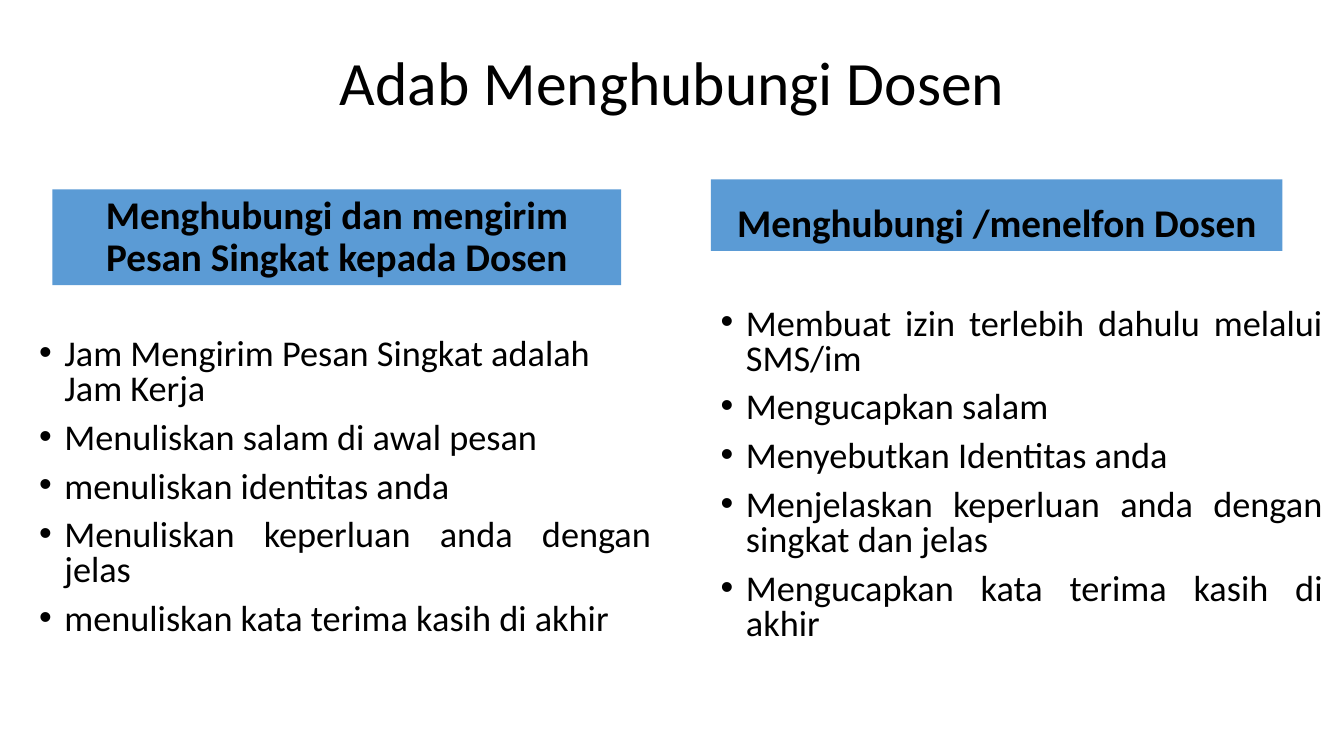
from lxml import etree
from pptx import Presentation
from pptx.dml.color import RGBColor
from pptx.enum.shapes import MSO_SHAPE
from pptx.enum.text import MSO_ANCHOR, MSO_AUTO_SIZE, PP_ALIGN
from pptx.oxml.ns import qn
from pptx.util import Pt

LEFT, CENTER, JUSTIFY = PP_ALIGN.LEFT, PP_ALIGN.CENTER, PP_ALIGN.JUSTIFY
TOP, MIDDLE, BOTTOM = MSO_ANCHOR.TOP, MSO_ANCHOR.MIDDLE, MSO_ANCHOR.BOTTOM
RECTANGLE, NO_FIT = MSO_SHAPE.RECTANGLE, MSO_AUTO_SIZE.NONE

# Content: boxes are left, top, width, height in px, 100 px to the inch
TITLE = "Adab Menghubungi Dosen"
TITLE_BOX = (92, 40, 1150, 90)
COLUMNS = [
    {
        "heading": "Menghubungi dan mengirim Pesan Singkat kepada Dosen",
        "heading_box": (52, 188, 564, 95),
        "list_box": (29, 274, 627, 403),
        "list_inset": 62,
        "points": [
            ("Jam Mengirim Pesan Singkat adalah Jam Kerja", LEFT),
            ("Menuliskan salam di awal pesan", JUSTIFY),
            ("menuliskan identitas anda", JUSTIFY),
            ("Menuliskan keperluan anda dengan jelas", JUSTIFY),
            ("menuliskan kata terima kasih di akhir", JUSTIFY),
        ],
    },
    {
        "heading": "Menghubungi /menelfon Dosen",
        "heading_box": (705, 178, 567, 71),
        "list_box": (705, 301, 617, 376),
        "list_inset": 5,
        "points": [
            ("Membuat izin terlebih dahulu melalui SMS/im", JUSTIFY),
            ("Mengucapkan salam", JUSTIFY),
            ("Menyebutkan Identitas anda", JUSTIFY),
            ("Menjelaskan keperluan anda dengan singkat dan jelas", JUSTIFY),
            ("Mengucapkan kata terima kasih di akhir", JUSTIFY),
        ],
    },
]

# Formats
BLACK, BLUE = "000000", "5B9BD5"
BULLET_INDENT = 25
TITLE_FONT = {"name": "Calibri", "size": Pt(44), "bold": False}
HEADING_FONT = {"name": "Calibri", "size": Pt(28), "bold": True}
LIST_FONT = {"name": "Calibri", "size": Pt(25.9), "bold": False}
TITLE_SPACING = {"line_spacing": 0.9, "space_before": Pt(0)}
HEADING_SPACING = {"line_spacing": 0.9, "space_before": Pt(10)}
LIST_SPACING = {"line_spacing": 0.8, "space_before": Pt(10)}


def px(length):
    return length * 9144


def color(hex_string):
    return RGBColor.from_string(hex_string)


def apply(target, values):
    for attribute, value in values.items():
        setattr(target, attribute, value)


def write(frame, lines, anchor, font, spacing):
    apply(frame, {"word_wrap": True, "auto_size": NO_FIT, "vertical_anchor": anchor})
    for index, (text, alignment) in enumerate(lines):
        paragraph = frame.paragraphs[0] if index == 0 else frame.add_paragraph()
        apply(paragraph, {"alignment": alignment, **spacing})
        run = paragraph.add_run()
        run.text = text
        apply(run.font, font)
        run.font.color.rgb = color(BLACK)


def add_bullet(paragraph):
    properties = paragraph._p.get_or_add_pPr()
    properties.set("marL", str(px(BULLET_INDENT)))
    properties.set("indent", str(-px(BULLET_INDENT)))
    etree.SubElement(properties, qn("a:buFont"), typeface="Arial")
    etree.SubElement(properties, qn("a:buChar"), char="•")


def add_heading(slide, text, box):
    heading = slide.shapes.add_shape(RECTANGLE, *map(px, box))
    heading.shadow.inherit = False
    heading.fill.solid()
    heading.fill.fore_color.rgb = color(BLUE)
    heading.line.fill.background()
    write(heading.text_frame, [(text, CENTER)], BOTTOM, HEADING_FONT, HEADING_SPACING)


def add_list(slide, points, box, inset):
    frame = slide.shapes.add_textbox(*map(px, box)).text_frame
    frame.margin_top = px(inset)
    write(frame, points, TOP, LIST_FONT, LIST_SPACING)
    for paragraph in frame.paragraphs:
        add_bullet(paragraph)


def main():
    presentation = Presentation()
    apply(presentation, {"slide_width": px(1333), "slide_height": px(750)})
    slide = presentation.slides.add_slide(presentation.slide_layouts[5])

    # Title
    title = slide.shapes.title
    apply(title, dict(zip(("left", "top", "width", "height"), map(px, TITLE_BOX))))
    write(title.text_frame, [(TITLE, CENTER)], MIDDLE, TITLE_FONT, TITLE_SPACING)

    # Two columns, each a heading over a bulleted list
    for column in COLUMNS:
        add_heading(slide, column["heading"], column["heading_box"])
        add_list(slide, column["points"], column["list_box"], column["list_inset"])

    presentation.save("out.pptx")


if __name__ == "__main__":
    main()
